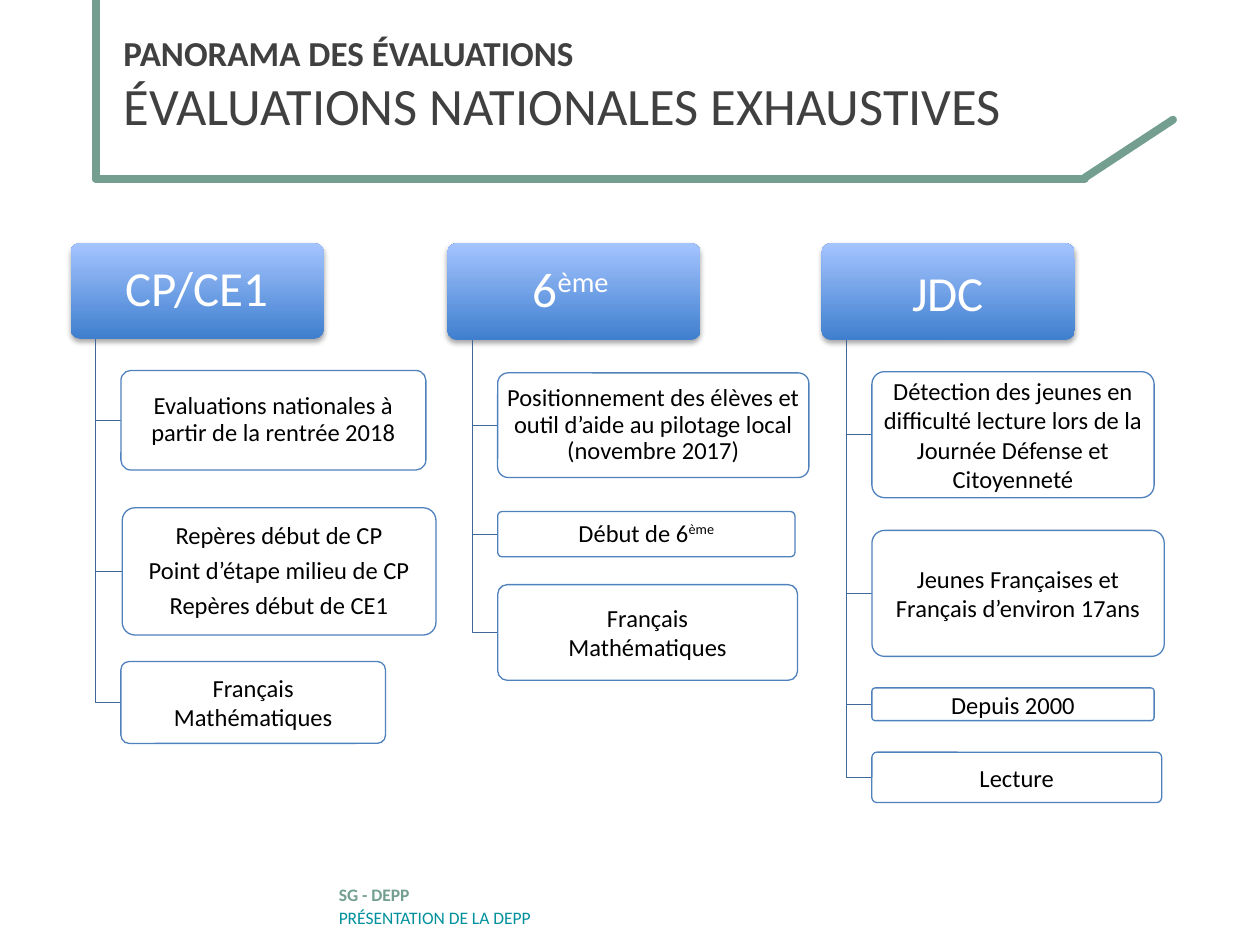
from dataclasses import dataclass

from lxml.etree import SubElement
from pptx import Presentation
from pptx.dml.color import RGBColor
from pptx.enum.shapes import MSO_CONNECTOR, MSO_SHAPE
from pptx.enum.text import MSO_ANCHOR, MSO_AUTO_SIZE, PP_ALIGN
from pptx.oxml.ns import qn
from pptx.util import Inches, Pt

FONT = "Calibri"
COLORS = {
    "frame": "749F90", "title": "404040", "footer": "00919D",
    "header_bottom": "3F7FCE", "header_top": "A4C4FF", "header_text": "FFFFFF",
    "card": "FFFFFF", "card_line": "4F81BD", "card_text": "000000",
    "branch": "3F6797", "shadow": "000000",
}
HEADER_TOP, HEADER_WIDTH = 1.93, 2.01
STEM_INDENT = 0.2  # from the header's left edge to the vertical branch


@dataclass
class Card:
    left: float
    top: float
    width: float
    height: float
    lines: list[str]  # "^" starts a superscript
    tight: bool = False  # narrower lines, with space after each paragraph


@dataclass
class Column:
    left: float
    height: float
    heading: str
    cards: list[Card]
    tight: bool = True


SUBJECTS = ["Français", "Mathématiques"]
COLUMNS = [
    Column(0.56, 0.76, "CP/CE1", [
        Card(0.96, 2.94, 2.42, 0.79, ["Evaluations nationales à partir de la rentrée 2018"], True),
        Card(0.97, 4.03, 2.49, 1.01, ["Repères début de CP", "Point d’étape milieu de CP",
                                      "Repères début de CE1"], True),
        Card(0.96, 5.25, 2.1, 0.65, SUBJECTS),
    ]),
    Column(3.55, 0.77, "6^ème ", [
        Card(3.95, 2.96, 2.47, 0.83, ["Positionnement des élèves et outil d’aide au pilotage "
                                      "local (novembre 2017)"], True),
        Card(3.95, 4.06, 2.36, 0.36, ["Début de 6^ème"], True),
        Card(3.95, 4.64, 2.38, 0.76, SUBJECTS),
    ]),
    Column(6.52, 0.77, "JDC", [
        Card(6.92, 2.95, 2.24, 1, ["Détection des jeunes en difficulté lecture lors de la "
                                   "Journée Défense et Citoyenneté"]),
        Card(6.92, 4.21, 2.32, 1, ["Jeunes Françaises et Français d’environ 17ans"]),
        Card(6.92, 5.46, 2.24, 0.26, ["Depuis 2000"]),
        Card(6.92, 5.97, 2.3, 0.4, ["Lecture"]),
    ], tight=False),
]
FRAME = [(0.76, 1.42, 8.61, 1.42), (8.61, 1.41, 9.31, 0.95), (0.76, 1.41, 0.76, 0)]


def rgb(role: str) -> RGBColor:
    return RGBColor.from_string(COLORS[role])


def add_run(paragraph, text: str, size: float, role: str, bold: bool = False):
    run = paragraph.add_run()
    run.text = text
    run.font.name, run.font.size, run.font.bold = FONT, Pt(size), bold
    run.font.color.rgb = rgb(role)
    return run


def add_shadow(shape) -> None:
    shape.shadow.inherit = False
    effects = shape._element.spPr.find(qn("a:effectLst"))
    outer = SubElement(effects, qn("a:outerShdw"), blurRad=str(Pt(3.1)), dist=str(Pt(1.8)),
                       dir="5400000", rotWithShape="0")
    color = SubElement(outer, qn("a:srgbClr"), val=COLORS["shadow"])
    SubElement(color, qn("a:alpha"), val="35000")


def add_frame_line(slide, x1: float, y1: float, x2: float, y2: float) -> None:
    line = slide.shapes.add_connector(
        MSO_CONNECTOR.STRAIGHT, Inches(x1), Inches(y1), Inches(x2), Inches(y2))
    line.line.color.rgb = rgb("frame")
    line.line.width = Pt(4.5)
    properties = line._element.spPr
    properties.find(qn("a:ln")).set("cap", "rnd")
    SubElement(properties, qn("a:effectLst"))


def add_round_box(slide, left: float, top: float, width: float, height: float,
                  lines: list[str], size: float, role: str, tight: bool, inset: float):
    box = slide.shapes.add_shape(MSO_SHAPE.ROUNDED_RECTANGLE, Inches(left), Inches(top),
                                 Inches(width), Inches(height))
    box.adjustments[0] = 0.1
    box.shadow.inherit = False
    frame = box.text_frame
    frame.word_wrap = True
    frame.vertical_anchor = MSO_ANCHOR.MIDDLE
    frame.margin_left = frame.margin_right = Inches(inset)
    frame.margin_top = frame.margin_bottom = Inches(inset - 0.01)
    for index, line in enumerate(lines):
        paragraph = frame.add_paragraph() if index else frame.paragraphs[0]
        paragraph.alignment = PP_ALIGN.CENTER
        if tight:
            paragraph.line_spacing = 0.9
            paragraph.space_after = Pt(size * 0.35)
        base, _, raised = line.partition("^")
        add_run(paragraph, base, size, role)
        if raised:
            superscript = add_run(paragraph, raised, size, role)
            superscript._r.get_or_add_rPr().set("baseline", "30000")
    return box


def add_branch(slide, x: float, top: float, card: Card) -> None:
    middle = card.top + card.height / 2
    builder = slide.shapes.build_freeform(Inches(x), Inches(top))
    builder.add_line_segments([(Inches(x), Inches(middle)),
                               (Inches(card.left), Inches(middle))], close=False)
    branch = builder.convert_to_shape()
    branch.fill.background()
    branch.line.color.rgb = rgb("branch")
    branch.line.width = Pt(0.75)
    branch.shadow.inherit = False


def add_column(slide, column: Column) -> None:
    header = add_round_box(slide, column.left, HEADER_TOP, HEADER_WIDTH, column.height,
                           [column.heading], 28, "header_text", column.tight, 0.08)
    header.fill.gradient()
    header.fill.gradient_angle = 90
    for stop, role, position in zip(header.fill.gradient_stops,
                                    ("header_bottom", "header_top"), (0, 1)):
        stop.color.rgb = rgb(role)
        stop.position = position
    header.line.fill.background()
    add_shadow(header)
    for card in column.cards:
        add_branch(slide, column.left + STEM_INDENT, HEADER_TOP + column.height, card)
        box = add_round_box(slide, card.left, card.top, card.width, card.height,
                            card.lines, 14, "card_text", card.tight, 0.05)
        box.fill.solid()
        box.fill.fore_color.rgb = rgb("card")
        box.line.color.rgb = rgb("card_line")
        box.line.width = Pt(0.75)


def main() -> None:
    deck = Presentation()
    deck.slide_width, deck.slide_height = Inches(10), Inches(7.5)
    slide = deck.slides.add_slide(deck.slide_layouts[5])

    # Title and its frame
    for ends in FRAME:
        add_frame_line(slide, *ends)
    title = slide.shapes.title
    title.left, title.top = Inches(0.88), Inches(0)
    title.width, title.height = Inches(8.62), Inches(1.33)
    title.text_frame.auto_size = MSO_AUTO_SIZE.NONE
    title.text_frame.vertical_anchor = MSO_ANCHOR.MIDDLE
    heading = title.text_frame.paragraphs[0]
    heading.alignment = PP_ALIGN.LEFT
    add_run(heading, "PANORAMA DES ÉVALUATIONS", 20, "title", bold=True)
    heading.add_line_break()
    add_run(heading, "ÉVALUATIONS NATIONALES EXHAUSTIVES", 30, "title")

    # Assessment columns
    for column in COLUMNS:
        add_column(slide, column)

    # Footer
    footer = slide.shapes.add_textbox(Inches(2.59), Inches(6.9), Inches(5.05), Inches(0.56))
    footer.text_frame.word_wrap = True
    footer.text_frame.vertical_anchor = MSO_ANCHOR.MIDDLE
    credit = footer.text_frame.paragraphs[0]
    credit.line_spacing = Pt(13.2)
    add_run(credit, "SG - DEPP", 10, "frame", bold=True)
    credit.add_line_break()
    add_run(credit, "PRÉSENTATION DE LA DEPP", 10, "footer")

    deck.save("out.pptx")


if __name__ == "__main__":
    main()
